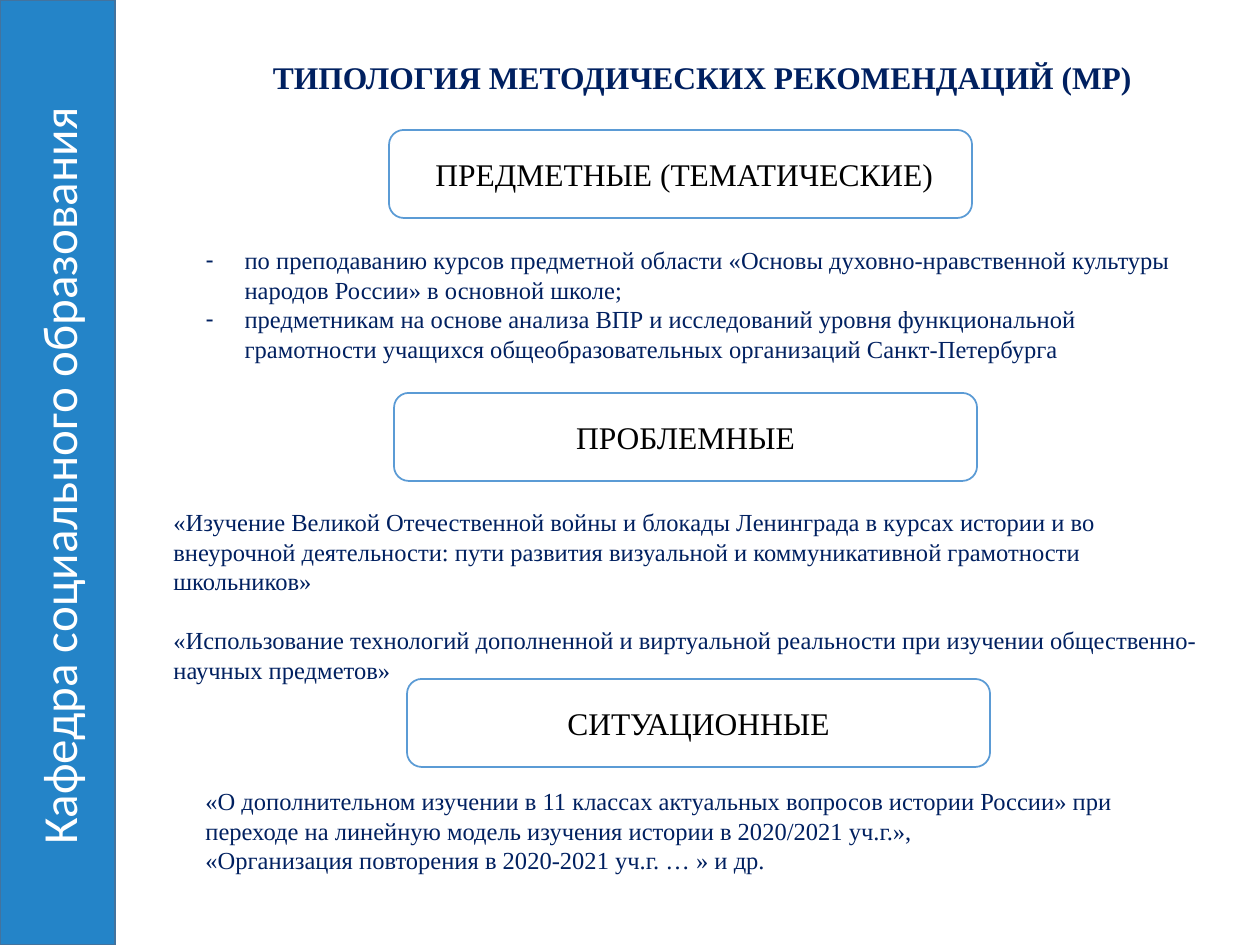
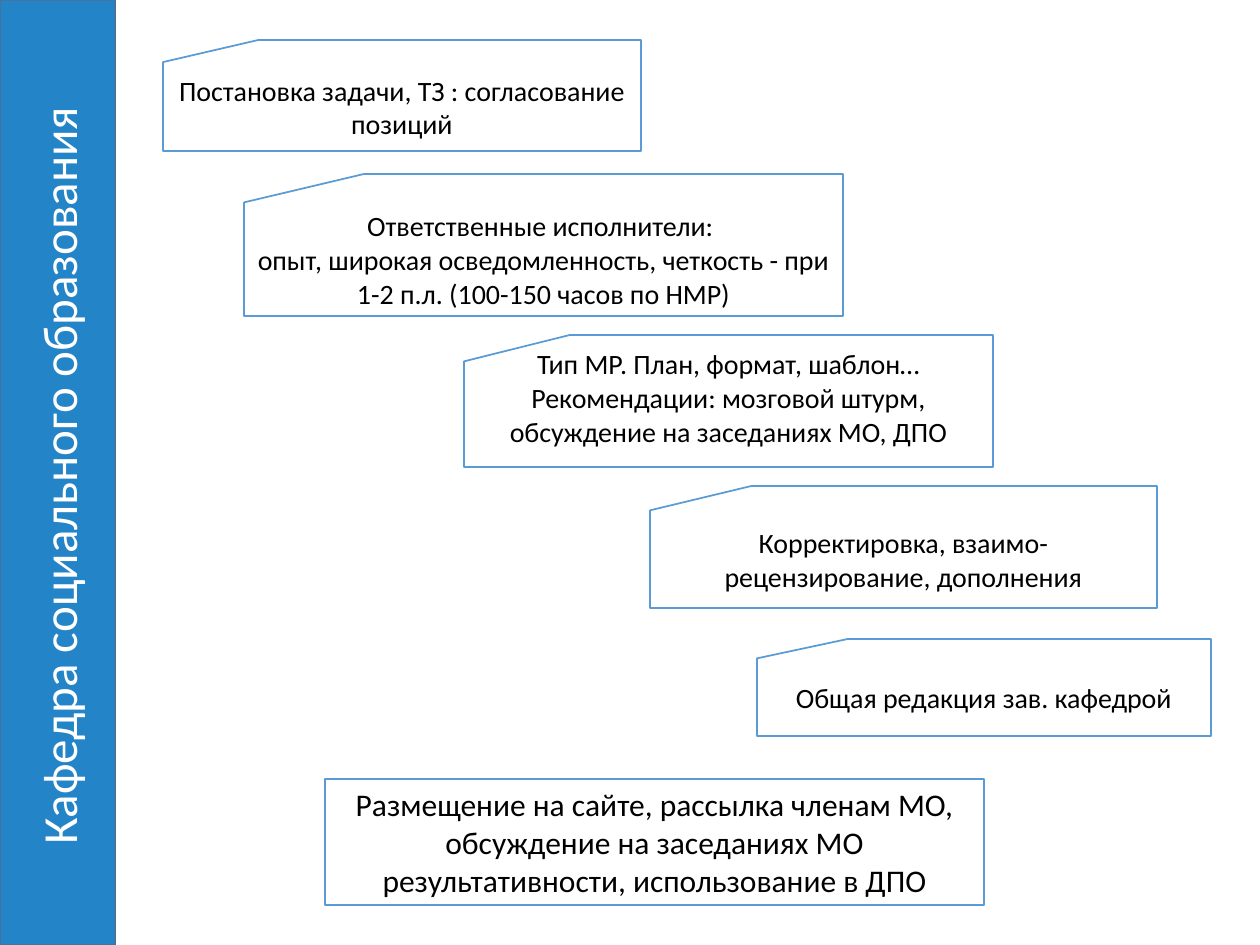
"""Builds two slides on the types and the preparation of methodical recommendations."""
from lxml import etree
from pptx import Presentation
from pptx.dml.color import RGBColor
from pptx.enum.shapes import MSO_SHAPE
from pptx.enum.text import MSO_ANCHOR, MSO_AUTO_SIZE, PP_ALIGN
from pptx.oxml.ns import qn
from pptx.util import Emu, Pt

RECT, ROUNDED, CARD = MSO_SHAPE.RECTANGLE, MSO_SHAPE.ROUNDED_RECTANGLE, MSO_SHAPE.FLOWCHART_CARD
LEFT, CENTER = PP_ALIGN.LEFT, PP_ALIGN.CENTER
TOP, MIDDLE = MSO_ANCHOR.TOP, MSO_ANCHOR.MIDDLE
FIXED = MSO_AUTO_SIZE.NONE

BAND_BLUE = RGBColor(0x00, 0x70, 0xC0)
BAND_EDGE = RGBColor(0x43, 0x73, 0x9E)
BOX_EDGE = RGBColor(0x5B, 0x9B, 0xD5)
NAVY = RGBColor(0x00, 0x20, 0x60)
BLACK = RGBColor(0x00, 0x00, 0x00)
WHITE = RGBColor(0xFF, 0xFF, 0xFF)
SERIF, SANS = "Times New Roman", "Calibri"

PX_PER_INCH = 126
SLIDE_W, SLIDE_H, BAND_W = 1260, 945, 115
LIST_INDENT = 39

DEPARTMENT = "Кафедра социального образования"
TITLE = ("ТИПОЛОГИЯ МЕТОДИЧЕСКИХ РЕКОМЕНДАЦИЙ (МР) ", (231, 53, 951, 47))

TYPE_SIZE = (583, 88)
TYPES = [
    (" ПРЕДМЕТНЫЕ (ТЕМАТИЧЕСКИЕ)", (389, 130)),
    (" ПРОБЛЕМНЫЕ ", (394, 393)),
    ("СИТУАЦИОННЫЕ", (407, 679)),
]
SUBJECT_LIST = ([
    "по преподаванию курсов предметной области «Основы духовно-нравственной культуры "
    "народов России» в основной школе;",
    "предметникам на основе анализа ВПР и исследований уровня функциональной "
    "грамотности учащихся общеобразовательных организаций Санкт-Петербурга",
], (193, 239, 1011, 131))
EXAMPLES = [
    ([
        "«Изучение Великой Отечественной войны и блокады Ленинграда в курсах истории и во "
        "внеурочной деятельности: пути развития визуальной и коммуникативной грамотности "
        "школьников»",
        "«Использование технологий дополненной и виртуальной реальности при изучении "
        "общественно-научных предметов»",
    ], (161, 501, 1074, 161), 17),
    ([
        "«О дополнительном изучении в 11 классах актуальных вопросов истории России» при "
        "переходе на линейную модель изучения истории в 2020/2021 уч.г.»,",
        "«Организация повторения в 2020-2021 уч.г. … » и др.",
    ], (193, 780, 1023, 102), 0),
]

STEPS = [
    (["Постановка задачи, ТЗ : согласование позиций"], (163, 40, 478, 111), 6),
    (["Ответственные исполнители: ",
      "опыт, широкая осведомленность, четкость - при 1-2 п.л. (100-150 часов по НМР)"],
     (244, 174, 599, 142), 6),
    (["Тип МР. План, формат, шаблон… Рекомендации: мозговой штурм, "
      "обсуждение на заседаниях МО, ДПО"], (464, 335, 529, 132), 40),
    (["Корректировка, взаимо-рецензирование, дополнения"], (650, 486, 507, 122), 6),
    (["Общая редакция зав. кафедрой"], (757, 639, 454, 97), 6),
]
RESULT = (["Размещение на сайте, рассылка членам МО, обсуждение на заседаниях МО "
           "результативности, использование в ДПО"], (325, 779, 659, 126))

BAND_FONT = {"name": SANS, "size": Pt(28), "color": WHITE}
TITLE_FONT = {"name": SERIF, "size": Pt(18), "color": NAVY, "bold": True}
TYPE_FONT = {"name": SERIF, "size": Pt(18), "color": BLACK}
NOTE_FONT = {"name": SERIF, "size": Pt(14), "color": NAVY}
STEP_FONT = {"name": SANS, "size": Pt(16), "color": BLACK}
RESULT_FONT = {"name": SANS, "size": Pt(18), "color": BLACK}


def px(n):
    return Emu(round(n * 914400 / PX_PER_INCH))


def place(sp, box):
    for key, value in zip(("left", "top", "width", "height"), box):
        setattr(sp, key, px(value))


def write(sp, lines, font, align=CENTER, anchor=MIDDLE, gap=0, bottom=6):
    tf = sp.text_frame
    frame = {"word_wrap": True, "auto_size": FIXED, "vertical_anchor": anchor,
             "margin_bottom": px(bottom)}
    for key, value in frame.items():
        setattr(tf, key, value)
    for i, line in enumerate(lines):
        p = tf.add_paragraph() if i else tf.paragraphs[0]
        p.alignment = align
        p.space_before = Pt(gap if i else 0)
        r = p.add_run()
        r.text = line
        for key, value in font.items():
            if key == "color":
                r.font.color.rgb = value
            else:
                setattr(r.font, key, value)


def add_box(s, kind, box, lines, font, fill=WHITE, edge=BOX_EDGE, bottom=6):
    sp = s.shapes.add_shape(kind, *map(px, box))
    sp.shadow.inherit = False
    sp.fill.solid()
    sp.fill.fore_color.rgb = fill
    sp.line.color.rgb = edge
    sp.line.width = Pt(1)
    write(sp, lines, font, bottom=bottom)
    return sp


def add_band(s):
    sp = add_box(s, RECT, (0, 0, BAND_W, SLIDE_H), [DEPARTMENT], BAND_FONT, BAND_BLUE, BAND_EDGE)
    sp.text_frame._txBody.bodyPr.set("vert", "vert270")
    color = sp.fill._xPr.find(qn("a:solidFill"))[0]
    etree.SubElement(color, qn("a:alpha"), val="86000")


def add_dashes(sp):
    for p in sp.text_frame.paragraphs:
        pPr = p._p.get_or_add_pPr()
        pPr.set("marL", str(px(LIST_INDENT)))
        pPr.set("indent", str(-px(LIST_INDENT)))
        etree.SubElement(pPr, qn("a:buChar"), char="-")


def build_types(prs):
    s = prs.slides.add_slide(prs.slide_layouts[1])
    add_band(s)
    title, box = TITLE
    place(s.shapes.title, box)
    write(s.shapes.title, [title], TITLE_FONT)
    for name, corner in TYPES:
        add_box(s, ROUNDED, corner + TYPE_SIZE, [name], TYPE_FONT)
    lines, box = SUBJECT_LIST
    body = s.placeholders[1]
    place(body, box)
    write(body, lines, NOTE_FONT, LEFT, TOP)
    add_dashes(body)
    for lines, box, gap in EXAMPLES:
        sp = s.shapes.add_textbox(*map(px, box))
        write(sp, lines, NOTE_FONT, LEFT, TOP, gap)


def build_steps(prs):
    s = prs.slides.add_slide(prs.slide_layouts[6])
    add_band(s)
    for lines, box, bottom in STEPS:
        add_box(s, CARD, box, lines, STEP_FONT, bottom=bottom)
    lines, box = RESULT
    add_box(s, RECT, box, lines, RESULT_FONT)


def main():
    prs = Presentation()
    prs.slide_width, prs.slide_height = px(SLIDE_W), px(SLIDE_H)
    build_types(prs)
    build_steps(prs)
    prs.save("out.pptx")


if __name__ == "__main__":
    main()
